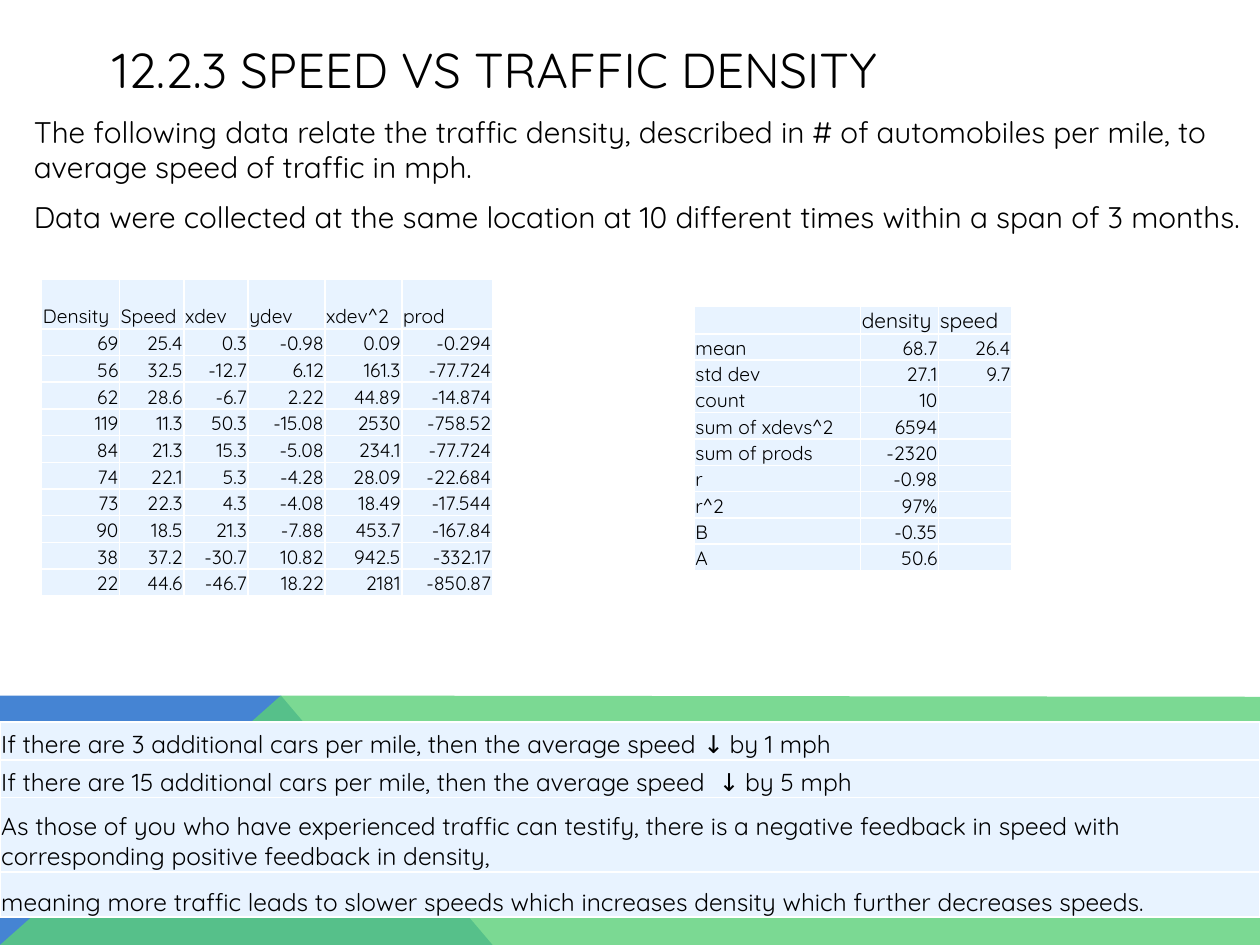
import pptx
import pptx.dml.color
import pptx.enum.text
import pptx.oxml
import pptx.oxml.ns
import pptx.util

PX = 9144  # EMU in one px, at 100 px to the inch
COLORS = {"text": "000000", "blue": "4584D3", "green": "5BD078", "cell": "E8F3FF", "border": "FFFFFF"}
ALIGN = pptx.enum.text.PP_ALIGN
ANCHOR = pptx.enum.text.MSO_ANCHOR

DENSITY_DATA = [
    ["Density", "Speed", "xdev", "ydev", "xdev^2", "prod"],
    ["69", "25.4", "0.3", "-0.98", "0.09", "-0.294"],
    ["56", "32.5", "-12.7", "6.12", "161.3", "-77.724"],
    ["62", "28.6", "-6.7", "2.22", "44.89", "-14.874"],
    ["119", "11.3", "50.3", "-15.08", "2530", "-758.52"],
    ["84", "21.3", "15.3", "-5.08", "234.1", "-77.724"],
    ["74", "22.1", "5.3", "-4.28", "28.09", "-22.684"],
    ["73", "22.3", "4.3", "-4.08", "18.49", "-17.544"],
    ["90", "18.5", "21.3", "-7.88", "453.7", "-167.84"],
    ["38", "37.2", "-30.7", "10.82", "942.5", "-332.17"],
    ["22", "44.6", "-46.7", "18.22", "2181", "-850.87"],
]
SUMMARY = [
    ["", "density", "speed"],
    ["mean", "68.7", "26.4"],
    ["std dev", "27.1", "9.7"],
    ["count", "10", ""],
    ["sum of xdevs^2", "6594", ""],
    ["sum of prods", "-2320", ""],
    ["r", "-0.98", ""],
    ["r^2", "97%", ""],
    ["B", "-0.35", ""],
    ["A", "50.6", ""],
]
CONCLUSIONS = [
    ["If there are 3 additional cars per mile, then the average speed ↓ by 1 mph"],
    ["If there are 15 additional cars per mile, then the average speed  ↓ by 5 mph"],
    ["As those of you who have experienced traffic can testify, there is a negative feedback "
     "in speed with corresponding positive feedback in density,"],
    ["meaning more traffic leads to slower speeds which increases density which further "
     "decreases speeds."],
]


def emu(px):
    return round(px * PX)


def rgb(name):
    return pptx.dml.color.RGBColor.from_string(COLORS[name])


def element(tag, attributes="", content=""):
    """Make one DrawingML element."""
    namespace = pptx.oxml.ns.nsdecls("a")
    return pptx.oxml.parse_xml(f"<a:{tag} {namespace} {attributes}>{content}</a:{tag}>")


def write(paragraph, text, *, font, size, align=ALIGN.LEFT, before=0):
    paragraph.alignment = align
    paragraph.space_before = pptx.util.Pt(before)
    if not text:  # keeps the empty line as low as a written one
        paragraph._p.append(element("endParaRPr", f'sz="{size * 100}"'))
        return
    run = paragraph.add_run()
    run.text = text
    run.font.name = font
    run.font.size = pptx.util.Pt(size)
    run.font.color.rgb = rgb("text")


def row_heights(header, total, count):
    """Give the header its height and share the rest equally."""
    return [header] + [(total - header) / (count - 1)] * (count - 1)


def is_number(text):
    return text.lstrip("-")[:1].isdigit()


class SlideBuilder:
    def __init__(self, slide, font):
        self.slide = slide
        self.font = font

    def title(self, text, left, top, width, height, size):
        shape = self.slide.shapes.title
        shape.left, shape.top, shape.width, shape.height = map(emu, (left, top, width, height))
        frame = shape.text_frame
        frame.auto_size = pptx.enum.text.MSO_AUTO_SIZE.NONE
        frame.vertical_anchor = ANCHOR.MIDDLE
        write(frame.paragraphs[0], text, font=self.font, size=size)

    def text(self, texts, left, top, width, height, size, gap):
        shape = self.slide.shapes.add_textbox(*map(emu, (left, top, width, height)))
        frame = shape.text_frame
        frame.word_wrap = True
        for index, text in enumerate(texts):
            paragraph = frame.add_paragraph() if index else frame.paragraphs[0]
            write(paragraph, text, font=self.font, size=size, before=gap if index else 0)

    def polygon(self, points, color, opacity=100):
        builder = self.slide.shapes.build_freeform(*points[0], scale=PX)
        builder.add_line_segments(points[1:], close=True)
        shape = builder.convert_to_shape()
        shape.shadow.inherit = False
        shape.line.fill.background()
        shape.fill.solid()
        shape.fill.fore_color.rgb = rgb(color)
        if opacity < 100:
            color_element = shape._element.spPr.find(".//" + pptx.oxml.ns.qn("a:srgbClr"))
            color_element.append(element("alpha", f'val="{opacity * 1000}"'))

    def cell(self, cell, text, size, anchor, align):
        cell.margin_left = cell.margin_right = cell.margin_top = emu(1)
        cell.margin_bottom = 0
        cell.vertical_anchor = anchor
        cell.fill.solid()
        cell.fill.fore_color.rgb = rgb("cell")
        line_fill = f'<a:solidFill><a:srgbClr val="{COLORS["border"]}"/></a:solidFill>'
        properties = cell._tc.get_or_add_tcPr()
        for index, side in enumerate(("lnL", "lnR", "lnT", "lnB")):
            properties.insert(index, element(side, 'w="12700"', line_fill))
        write(cell.text_frame.paragraphs[0], text, font=self.font, size=size, align=align)

    def table(self, rows, left, top, widths, heights, size, header_size=None,
              header_anchor=ANCHOR.BOTTOM):
        """Place a table whose numbers stand on the right and words on the left."""
        frame = self.slide.shapes.add_table(
            len(rows), len(widths), *map(emu, (left, top, sum(widths), sum(heights))))
        table = frame.table
        table.first_row = table.horz_banding = False
        for column, width in zip(table.columns, widths):
            column.width = emu(width)
        for row_index, (texts, height) in enumerate(zip(rows, heights)):
            table.rows[row_index].height = emu(height)
            is_header = row_index == 0
            for column_index, text in enumerate(texts):
                self.cell(
                    table.cell(row_index, column_index), text,
                    size=header_size if is_header and header_size else size,
                    anchor=header_anchor if is_header else ANCHOR.BOTTOM,
                    align=ALIGN.RIGHT if is_number(text) else ALIGN.LEFT)


def main():
    presentation = pptx.Presentation()
    presentation.slide_width, presentation.slide_height = emu(1000), emu(750)
    slide = presentation.slides.add_slide(presentation.slide_layouts[5])
    builder = SlideBuilder(slide, font="Quicksand")

    builder.polygon([(0, 750), (0, 552), (223, 552), (391, 750)], "blue")
    builder.polygon([(0, 750), (223, 552), (1000, 553), (1000, 750)], "green", opacity=80)
    builder.title("12.2.3 SPEED VS TRAFFIC DENSITY", 79, 0, 862, 109, size=28)
    builder.text(
        ["The following data relate the traffic density, described in # of automobiles per mile, "
         "to average speed of traffic in mph.",
         "Data were collected at the same location at 10 different times within a span of 3 months."],
        17, 85, 983, 461, size=17, gap=8)
    builder.table(DENSITY_DATA, 33, 222, [62, 51, 51, 61, 61, 72],
                  row_heights(39, 251, len(DENSITY_DATA)), size=11)
    builder.table(SUMMARY, 551, 243, [132, 62, 58], row_heights(22, 210, len(SUMMARY)),
                  size=11, header_size=12, header_anchor=ANCHOR.MIDDLE)
    builder.table(CONCLUSIONS, 0, 573, [1000], [30, 30, 59, 36], size=14)

    presentation.save("out.pptx")


if __name__ == "__main__":
    main()
